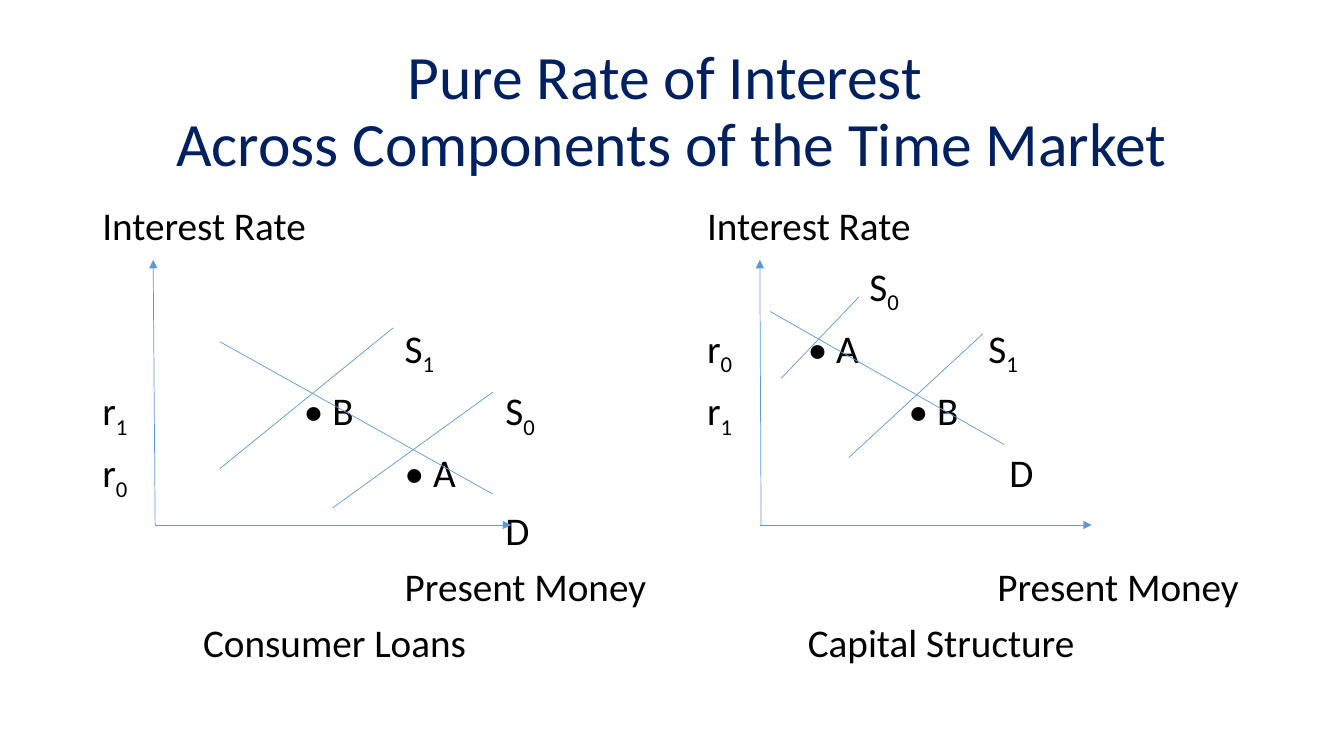
from lxml import etree
from pptx import Presentation
from pptx.dml.color import RGBColor
from pptx.enum.shapes import MSO_CONNECTOR
from pptx.enum.text import MSO_ANCHOR, PP_ALIGN
from pptx.oxml.ns import qn
from pptx.util import Cm, Pt

STRAIGHT = MSO_CONNECTOR.STRAIGHT
CENTER = PP_ALIGN.CENTER
TOP, MIDDLE = MSO_ANCHOR.TOP, MSO_ANCHOR.MIDDLE

FONT = "Calibri"
NAVY, BLACK, BLUE = "002060", "000000", "5B9BD5"
COLUMN = 2.54  # cm between label columns

TITLE = ["Pure Rate of Interest ", "Across Components of the Time Market"]

# Each row: (column, label, subscript)
LABEL_ROWS = [
    [(0, "Interest Rate", ""), (6, "Interest Rate", "")],
    [(7.61, "S", "0")],
    [(3, "S", "1"), (6, "r", "0"), (7, "• A", ""), (8.79, "S", "1")],
    [(0, "r", "1"), (2, "• B", ""), (4, "S", "0"), (6, "r", "1"), (8, "• B", "")],
    [(0, "r", "0"), (3, "• A", ""), (9, "D", "")],
    [(4, "D", "")],
    [(3, "Present Money", ""), (8.88, "Present Money", "")],
    [(1, "Consumer Loans", ""), (7, "Capital Structure", "")],
]

# Lines in cm: (x1, y1, x2, y2)
AXES = [
    (3.91, 13.23, 3.86, 6.55),
    (3.91, 13.23, 12.88, 13.23),
    (19.18, 13.23, 19.15, 6.55),
    (19.15, 13.23, 27.51, 13.23),
]
DEMAND = [(5.54, 8.61, 12.42, 12.45), (19.41, 7.85, 25.3, 11.2)]
SUPPLY = [
    (8.38, 12.8, 12.42, 9.88),
    (5.54, 11.81, 9.91, 8.26),
    (19.69, 9.53, 21.64, 7.49),
    (21.39, 11.53, 24.77, 8.41),
]


def color(hex_text):
    return RGBColor.from_string(hex_text)


def add_box(page, top, height, anchor):
    box = page.shapes.add_textbox(Cm(2.33), Cm(top), Cm(29.21), Cm(height))
    frame = box.text_frame
    frame.word_wrap = True
    frame.vertical_anchor = anchor
    return frame


def add_span(para, text, size, hex_text, subscript=False):
    span = para.add_run()
    span.text = text
    span.font.name = FONT
    span.font.size = Pt(size)
    span.font.color.rgb = color(hex_text)
    if subscript:
        span._r.get_or_add_rPr().set("baseline", "-25000")


def add_title(page):
    para = add_box(page, 1.01, 3.68, MIDDLE).paragraphs[0]
    para.alignment = CENTER
    para.line_spacing = 0.9
    for index, line in enumerate(TITLE):
        if index:
            para.add_line_break()
        add_span(para, line, 44, NAVY)


def add_label_row(para, labels):
    """Write one row of labels, each at its own tab stop."""
    para.line_spacing = 0.9
    para.space_before = Pt(10)
    stops = etree.SubElement(para._p.get_or_add_pPr(), qn("a:tabLst"))
    for column, label, subscript in labels:
        if column:
            position = str(int(Cm(column * COLUMN)))
            etree.SubElement(stops, qn("a:tab"), pos=position, algn="l")
            label = "\t" + label
        add_span(para, label, 28, BLACK)
        if subscript:
            add_span(para, subscript, 28, BLACK, subscript=True)


def add_line(page, ends, arrow=False):
    line = page.shapes.add_connector(STRAIGHT, *map(Cm, ends))
    line.line.color.rgb = color(BLUE)
    line.line.width = Pt(0.5)
    if arrow:
        etree.SubElement(line.line._get_or_add_ln(), qn("a:tailEnd"), type="triangle")
    etree.SubElement(line._element.spPr, qn("a:effectLst"))


def main():
    deck = Presentation()
    deck.slide_width, deck.slide_height = Cm(33.87), Cm(19.05)
    page = deck.slides.add_slide(deck.slide_layouts[6])

    add_title(page)
    frame = add_box(page, 5.07, 12.09, TOP)
    for index, labels in enumerate(LABEL_ROWS):
        para = frame.add_paragraph() if index else frame.paragraphs[0]
        add_label_row(para, labels)

    for ends in AXES:
        add_line(page, ends, arrow=True)
    for ends in DEMAND + SUPPLY:
        add_line(page, ends)

    deck.save("out.pptx")


if __name__ == "__main__":
    main()
